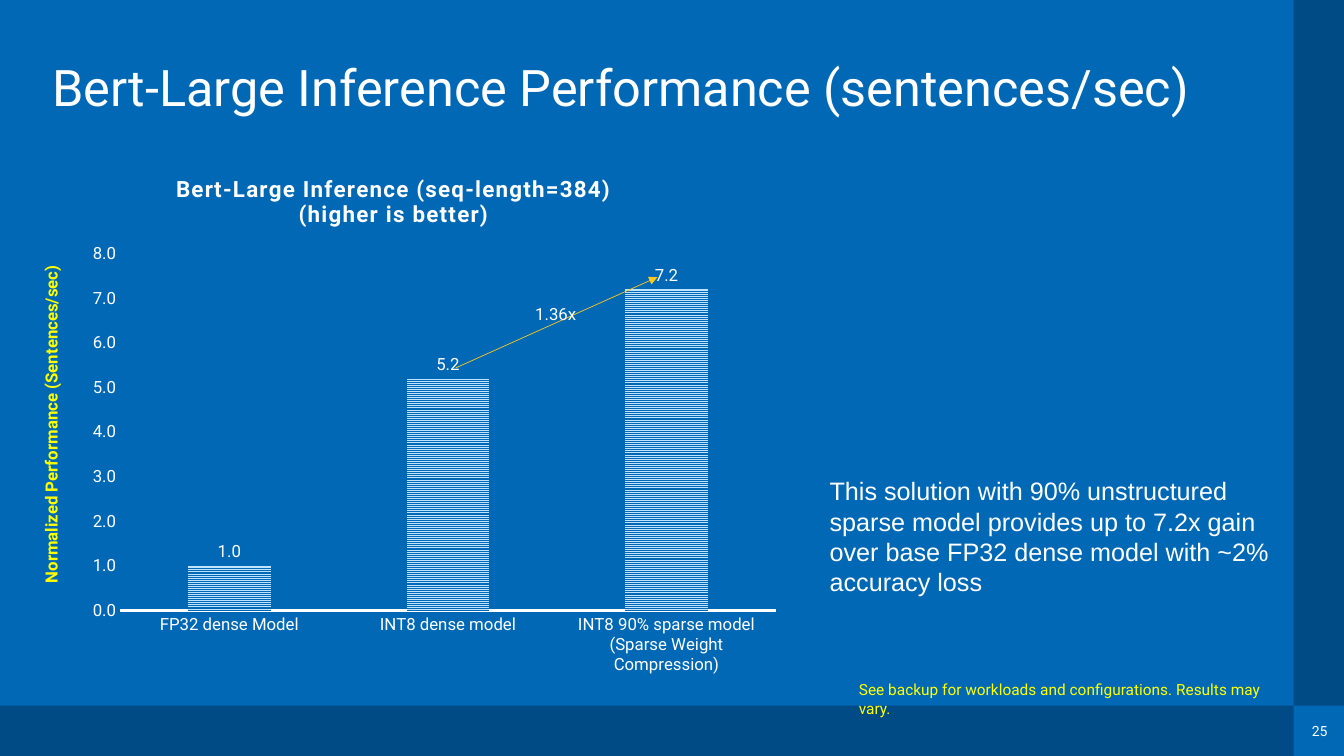
from lxml.etree import SubElement
from pptx import Presentation
from pptx.chart.data import CategoryChartData
from pptx.dml.color import RGBColor
from pptx.enum.chart import XL_CHART_TYPE as ChartType, XL_LABEL_POSITION as LabelPos, XL_TICK_MARK as Tick
from pptx.enum.dml import MSO_PATTERN as Pattern
from pptx.enum.shapes import MSO_CONNECTOR as Connector, MSO_SHAPE as Shape
from pptx.enum.text import MSO_ANCHOR as Anchor, MSO_AUTO_SIZE as AutoSize, PP_ALIGN as Align
from pptx.oxml.ns import qn
from pptx.util import Inches, Pt

WHITE = RGBColor(0xFF, 0xFF, 0xFF)
YELLOW = RGBColor(0xFF, 0xFF, 0x00)
GOLD = RGBColor(0xFE, 0xC9, 0x1B)
BLUE = RGBColor(0x00, 0x68, 0xB5)
NAVY = RGBColor(0x00, 0x4A, 0x86)
PALE = RGBColor(0xBD, 0xE3, 0xFF)
FONT = "Roboto"

WIDTH, HEIGHT, BAND = 13.33, 7.5, 0.5
HEADING = "Bert-Large Inference Performance (sentences/sec)"
CHART_TITLE = ["Bert-Large Inference (seq-length=384)", "(higher is better)"]
AXIS_TITLE = ["Normalized Performance (Sentences/sec)"]
SPEEDS = {
    "FP32 dense Model": 1.0,
    "INT8 dense model": 5.2,
    "INT8 90% sparse model (Sparse Weight Compression)": 7.2,
}
SUMMARY = ("This solution with 90% unstructured sparse model provides up to 7.2x gain "
           "over base FP32 dense model with ~2% accuracy loss")
FOOTNOTE = "See backup for workloads and configurations. Results may vary."
NOTES = [
    (SUMMARY, (8.13, 4.67, 4.63, 1.31), 18, "Arial", WHITE),
    (FOOTNOTE, (8.42, 6.7, 4.42, 0.3), 11, FONT, YELLOW),
]
GAIN = ("1.36x", (5.21, 2.96, 0.62, 0.3), 12, FONT, WHITE)
GAIN_ARROW = (4.52, 3.65, 6.52, 2.75)
PAGE = "25"


def inches(lengths):
    return [Inches(length) for length in lengths]


def style(font, size, color, name=FONT, bold=False):
    font.size, font.name, font.bold = Pt(size), name, bold
    font.color.rgb = color


def add_run(paragraph, words, size, color, name=FONT, bold=False):
    run = paragraph.add_run()
    run.text = words
    style(run.font, size, color, name, bold)
    return run


def add_note(slide, words, box, size, name, color):
    frame = slide.shapes.add_textbox(*inches(box)).text_frame
    frame.word_wrap = True
    add_run(frame.paragraphs[0], words, size, color, name)
    return frame


def add_band(slide, box):
    band = slide.shapes.add_shape(Shape.RECTANGLE, *inches(box))
    band.shadow.inherit = False
    band.fill.solid()
    band.fill.fore_color.rgb = NAVY
    band.line.fill.background()


def place(part, **shares):
    for old in part.findall(qn("c:layout")):
        part.remove(old)
    layout = SubElement(part, qn("c:layout"))
    manual = SubElement(layout, qn("c:manualLayout"))
    settings = {"xMode": "edge", "yMode": "edge", **shares}
    if "w" in shares:
        settings = {"layoutTarget": "inner", **settings}
    for tag, setting in settings.items():
        SubElement(manual, qn("c:" + tag)).set("val", str(setting))
    text = part.find(qn("c:tx"))
    part.insert(0 if text is None else 1, layout)


def write_title(title, lines, size, color, spacing=0):
    frame = title.text_frame
    for index, words in enumerate(lines):
        paragraph = frame.add_paragraph() if index else frame.paragraphs[0]
        paragraph.alignment = Align.CENTER
        run = add_run(paragraph, words, size, color, bold=True)
        run.font._element.set("spc", str(spacing))


def add_speed_chart(slide):
    data = CategoryChartData(number_format="0.0")
    data.categories = list(SPEEDS)
    data.add_series("Series 1", list(SPEEDS.values()))
    chart = slide.shapes.add_chart(
        ChartType.COLUMN_CLUSTERED, *inches((0.29, 1.55, 7.51, 5.26)), data).chart
    style(chart.font, 10, WHITE)
    chart.has_legend = False
    chart.has_title = True
    write_title(chart.chart_title, CHART_TITLE, 16, WHITE, 100)
    place(chart.chart_title._element, x=0.19, y=0.03)

    categories, values = chart.category_axis, chart.value_axis
    for axis in (categories, values):
        axis.major_tick_mark = axis.minor_tick_mark = Tick.NONE
        axis.has_major_gridlines = False
        style(axis.tick_labels.font, 12, WHITE)
    categories.format.line.color.rgb = WHITE
    categories.format.line.width = Pt(1.5)
    values.format.line.fill.background()
    values.minimum_scale, values.maximum_scale, values.major_unit = 0, 8, 1
    values.tick_labels.number_format = "0.0"
    values.tick_labels.number_format_is_linked = False
    values.has_title = True
    write_title(values.axis_title, AXIS_TITLE, 12, YELLOW)
    place(values.axis_title._element, x=0.01, y=0.2)
    place(chart._chartSpace.chart.plotArea, x=0.12, y=0.184, w=0.866, h=0.673)

    plot = chart.plots[0]
    plot.gap_width, plot.overlap, plot.vary_by_categories = 164, -22, False
    fill = plot.series[0].format.fill
    fill.patterned()
    fill.pattern = Pattern.NARROW_HORIZONTAL
    fill.fore_color.rgb, fill.back_color.rgb = BLUE, PALE
    labels = plot.series[0].data_labels
    labels.show_value = True
    labels.position = LabelPos.OUTSIDE_END
    labels.number_format, labels.number_format_is_linked = "0.0", False
    style(labels.font, 12, WHITE)


def add_gain_arrow(slide):
    arrow = slide.shapes.add_connector(Connector.STRAIGHT, *inches(GAIN_ARROW))
    arrow.line.color.rgb = GOLD
    arrow.line.width = Pt(0.5)
    SubElement(arrow.line._get_or_add_ln(), qn("a:tailEnd")).set("type", "triangle")
    SubElement(arrow._element.spPr, qn("a:effectLst"))


def main():
    deck = Presentation()
    deck.slide_width, deck.slide_height = inches((WIDTH, HEIGHT))
    slide = deck.slides.add_slide(deck.slide_layouts[5])
    slide.background.fill.solid()
    slide.background.fill.fore_color.rgb = BLUE

    add_band(slide, (0, HEIGHT - BAND, WIDTH - BAND, BAND))
    add_band(slide, (WIDTH - BAND, 0, BAND, HEIGHT - BAND))
    page = add_note(slide, PAGE, (13.01, 7.17, 0.16, 0.17), 10, FONT, WHITE)
    page.word_wrap = False
    page.margin_left = page.margin_right = page.margin_top = page.margin_bottom = 0
    page.paragraphs[0].alignment = Align.CENTER

    title = slide.shapes.title
    title.left, title.top, title.width, title.height = inches((0.42, 0.24, 12, 1.31))
    frame = title.text_frame
    frame.vertical_anchor, frame.auto_size = Anchor.MIDDLE, AutoSize.NONE
    frame.paragraphs[0].alignment = Align.LEFT
    frame.paragraphs[0].line_spacing = 0.9
    add_run(frame.paragraphs[0], HEADING, 36, WHITE)

    add_speed_chart(slide)
    for note in NOTES:
        add_note(slide, *note)
    add_gain_arrow(slide)
    add_note(slide, *GAIN)
    deck.save("out.pptx")


if __name__ == "__main__":
    main()
